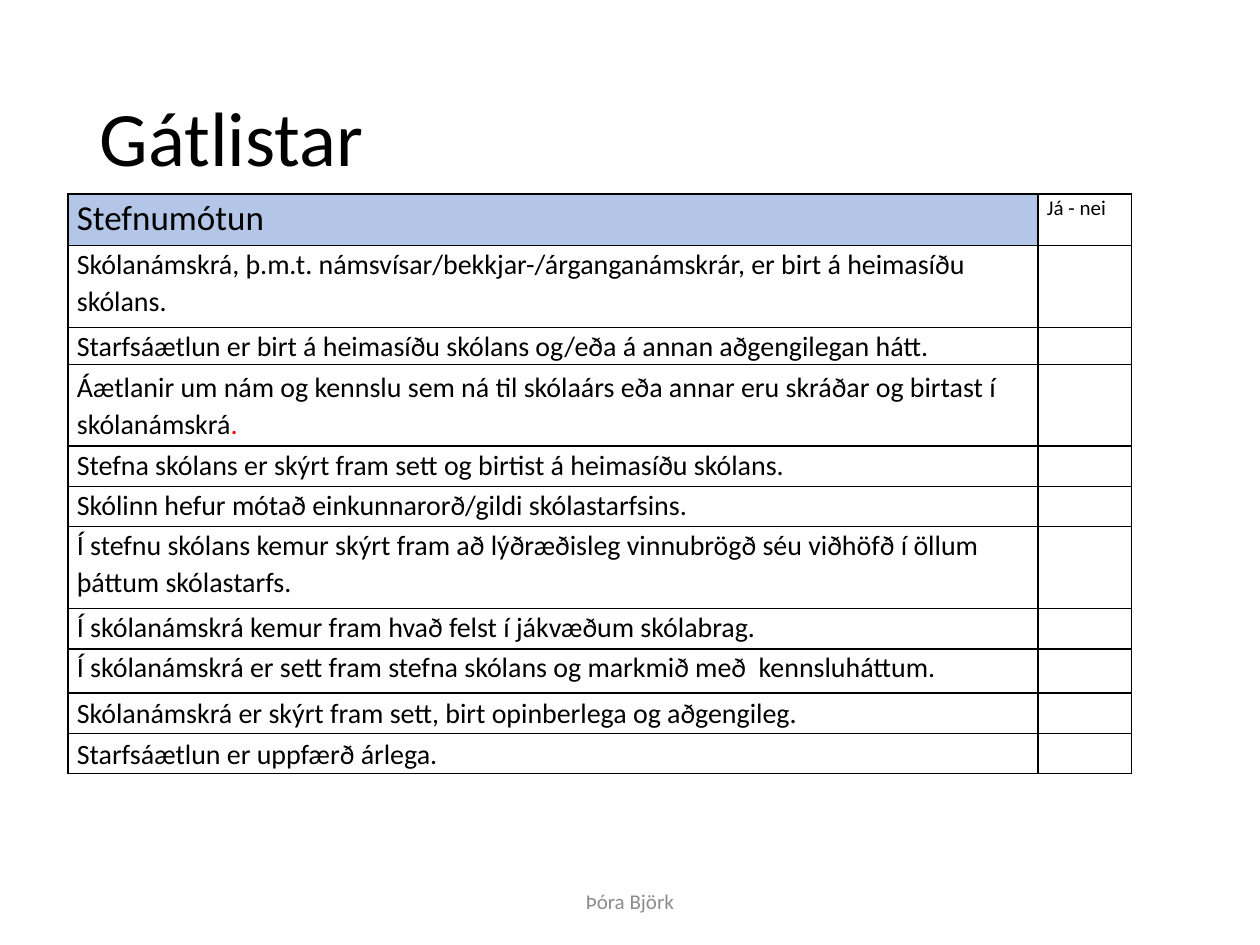
from dataclasses import dataclass

from lxml import etree
from pptx import Presentation
from pptx.dml.color import RGBColor
from pptx.enum import text
from pptx.oxml import ns
from pptx.util import Inches, Pt


@dataclass(frozen=True)
class Theme:
    """Fonts, colours and sizes of the deck."""
    font: str = "Calibri"
    ink: str = "000000"
    accent: str = "FF0000"
    muted: str = "8C8C8C"
    header: str = "B4C6E7"
    paper: str = "FFFFFF"
    title: int = 44
    heading: int = 20
    body: int = 16
    small: int = 12
    border: int = 1


THEME = Theme()
MIDDLE = text.MSO_ANCHOR.MIDDLE
TOP = text.MSO_ANCHOR.TOP

CHECKS = [
    ("Skólanámskrá, þ.m.t. námsvísar/bekkjar-/árganganámskrár, er birt á heimasíðu skólans.", 0.65, TOP),
    ("Starfsáætlun er birt á heimasíðu skólans og/eða á annan aðgengilegan hátt.", 0.28, TOP),
    ("Áætlanir um nám og kennslu sem ná til skólaárs eða annar eru skráðar og birtast í skólanámskrá", 0.65, MIDDLE),
    ("Stefna skólans er skýrt fram sett og birtist á heimasíðu skólans.", 0.32, TOP),
    ("Skólinn hefur mótað einkunnarorð/gildi skólastarfsins.", 0.32, TOP),
    ("Í stefnu skólans kemur skýrt fram að lýðræðisleg vinnubrögð séu viðhöfð í öllum þáttum skólastarfs.", 0.65, TOP),
    ("Í skólanámskrá kemur fram hvað felst í jákvæðum skólabrag.", 0.32, TOP),
    ("Í skólanámskrá er sett fram stefna skólans og markmið með  kennsluháttum.", 0.35, TOP),
    ("Skólanámskrá er skýrt fram sett, birt opinberlega og aðgengileg.", 0.32, MIDDLE),
    ("Starfsáætlun er uppfærð árlega.", 0.32, MIDDLE),
]
RED_STOP_ROW = 3


def style(para, size, color=THEME.ink, spacing=None):
    """Set the font and line spacing of a paragraph."""
    para.font.name = THEME.font
    para.font.size = Pt(size)
    para.font.bold = False
    para.font.color.rgb = RGBColor.from_string(color)
    para.line_spacing = spacing


def place(shape, box):
    """Move a shape to a box of left, top, width and height in inches."""
    shape.left, shape.top, shape.width, shape.height = map(Inches, box)


def add_borders(cell):
    """Draw a thin line on every side of a cell."""
    properties = cell._tc.get_or_add_tcPr()
    for side in ("lnL", "lnR", "lnT", "lnB"):
        line = etree.SubElement(properties, ns.qn(f"a:{side}"), w=str(Pt(THEME.border)))
        fill = etree.SubElement(line, ns.qn("a:solidFill"))
        etree.SubElement(fill, ns.qn("a:srgbClr"), val=THEME.ink)


def fill_cell(cell, words, size, fill=None, anchor=TOP):
    """Write and format one table cell."""
    cell.margin_left = cell.margin_right = Inches(0.07)
    cell.margin_top = cell.margin_bottom = 0
    cell.vertical_anchor = anchor
    add_borders(cell)
    if fill:
        cell.fill.solid()
        cell.fill.fore_color.rgb = RGBColor.from_string(fill)
    else:
        cell.fill.background()
    para = cell.text_frame.paragraphs[0]
    if words:
        para.add_run().text = words
    style(para, size, spacing=1.07)


def add_title(page, box):
    """Fill the title placeholder."""
    title = page.shapes.title
    place(title, box)
    title.text_frame.text = "Gátlistar"
    title.text_frame.vertical_anchor = MIDDLE
    para = title.text_frame.paragraphs[0]
    para.alignment = text.PP_ALIGN.LEFT
    style(para, THEME.title, spacing=0.9)


def add_checklist(page, box):
    """Build the checklist table with an answer column."""
    table = page.shapes.add_table(len(CHECKS) + 1, 2, *map(Inches, box)).table
    table.first_row = table.horz_banding = False
    answer_width = 0.74
    table.columns[0].width = Inches(box[2] - answer_width)
    table.columns[1].width = Inches(answer_width)
    table.rows[0].height = Inches(0.41)
    fill_cell(table.cell(0, 0), "Stefnumótun", THEME.heading, THEME.header)
    fill_cell(table.cell(0, 1), "Já - nei", THEME.small)
    for row, (words, height, anchor) in enumerate(CHECKS, start=1):
        table.rows[row].height = Inches(height)
        fill_cell(table.cell(row, 0), words, THEME.body, THEME.paper, anchor)
        fill_cell(table.cell(row, 1), "", THEME.small, THEME.paper)
    span = table.cell(RED_STOP_ROW, 0).text_frame.paragraphs[0].add_run()
    span.text = "."
    span.font.color.rgb = RGBColor.from_string(THEME.accent)


def add_footer(page, box):
    """Add the centred author line."""
    frame = page.shapes.add_textbox(*map(Inches, box)).text_frame
    frame.word_wrap = True
    frame.vertical_anchor = MIDDLE
    frame.text = "Þóra Björk"
    para = frame.paragraphs[0]
    para.alignment = text.PP_ALIGN.CENTER
    style(para, THEME.small, THEME.muted)


def main():
    """Build and save the deck."""
    deck = Presentation()
    deck.slide_width, deck.slide_height = Inches(10), Inches(7.5)
    page = deck.slides.add_slide(deck.slide_layouts[5])
    add_title(page, (0.69, 0.4, 8.62, 1.45))
    add_checklist(page, (0.54, 1.54, 8.44, 4.59))
    add_footer(page, (3.31, 6.95, 3.38, 0.4))
    deck.save("out.pptx")


if __name__ == "__main__":
    main()
